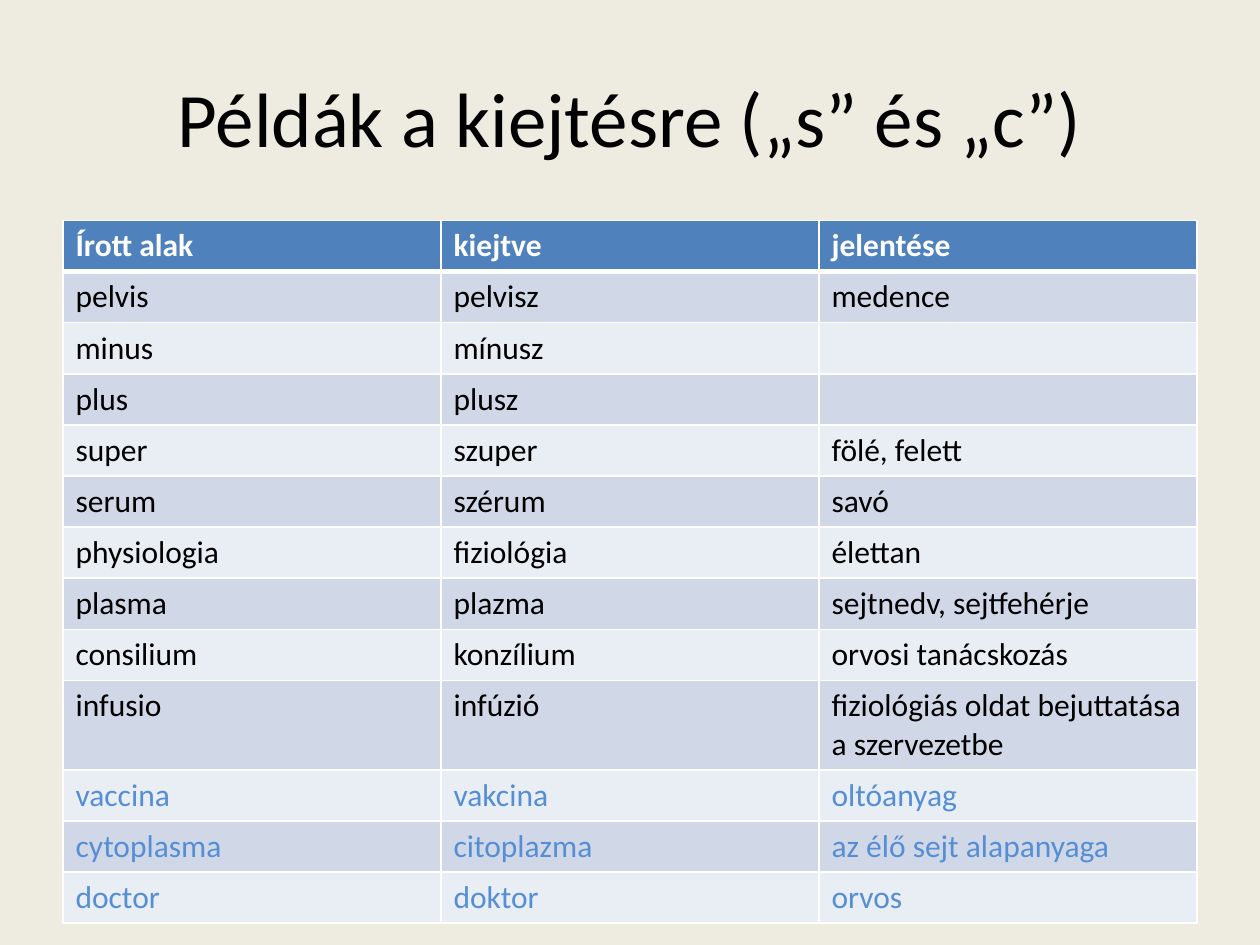
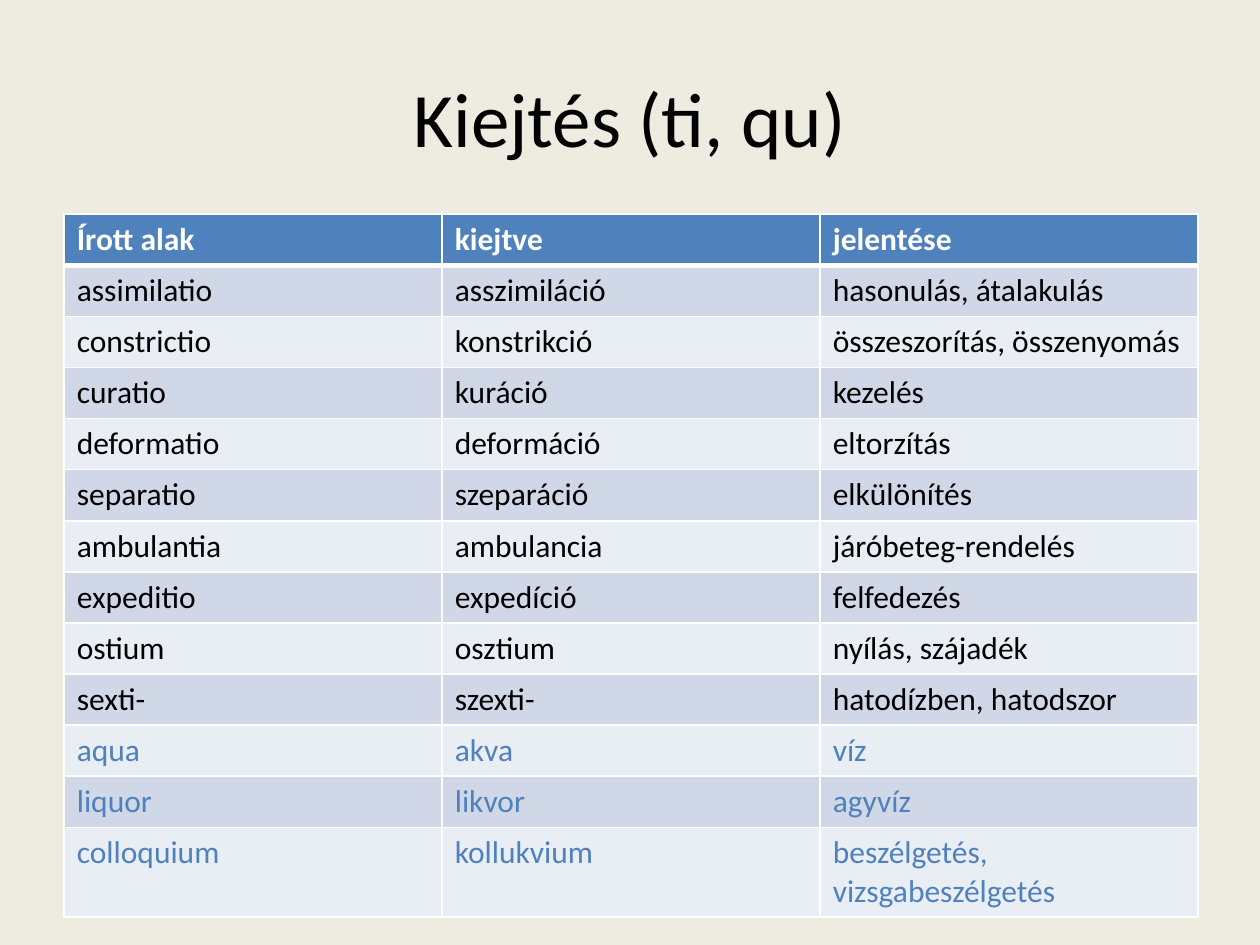
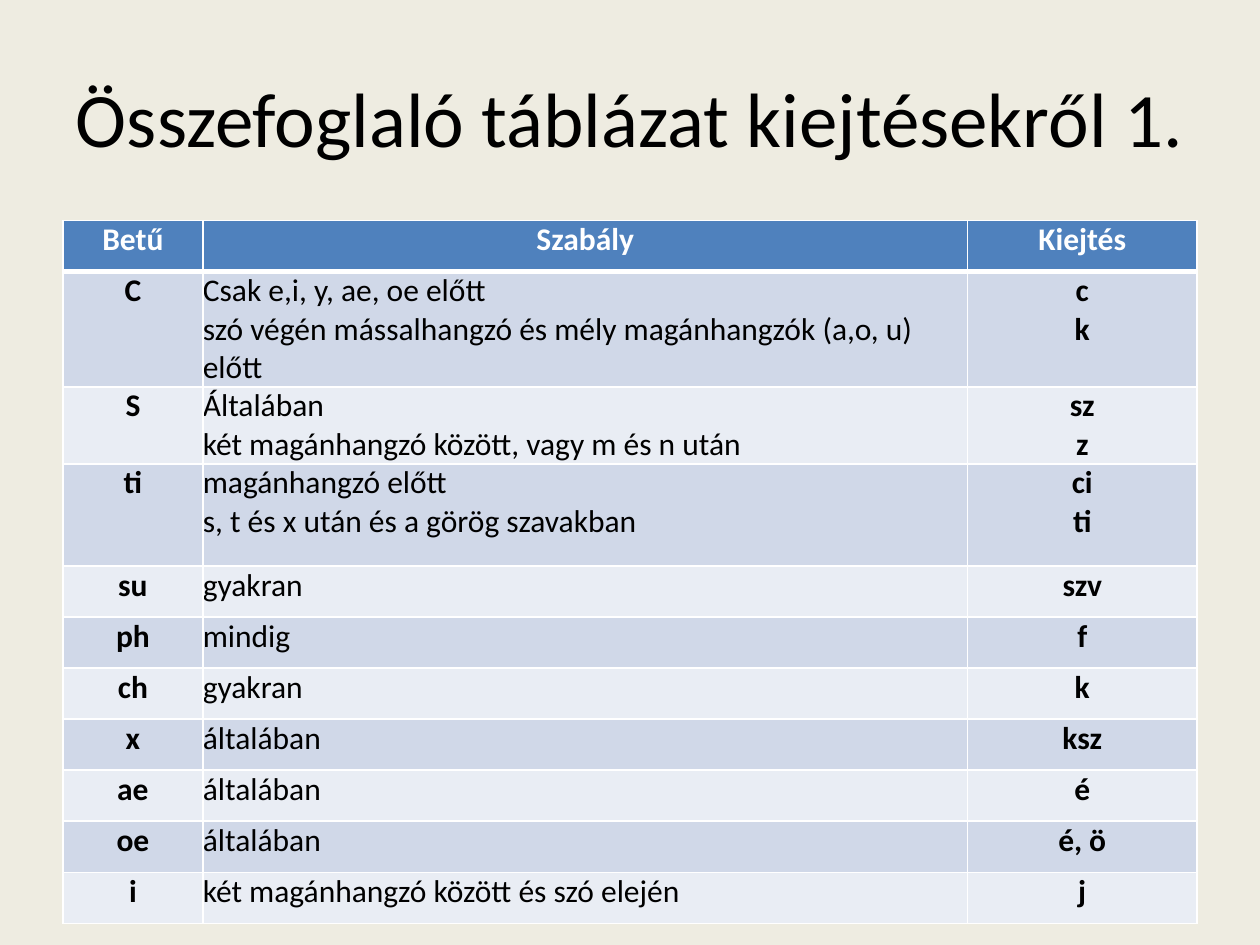
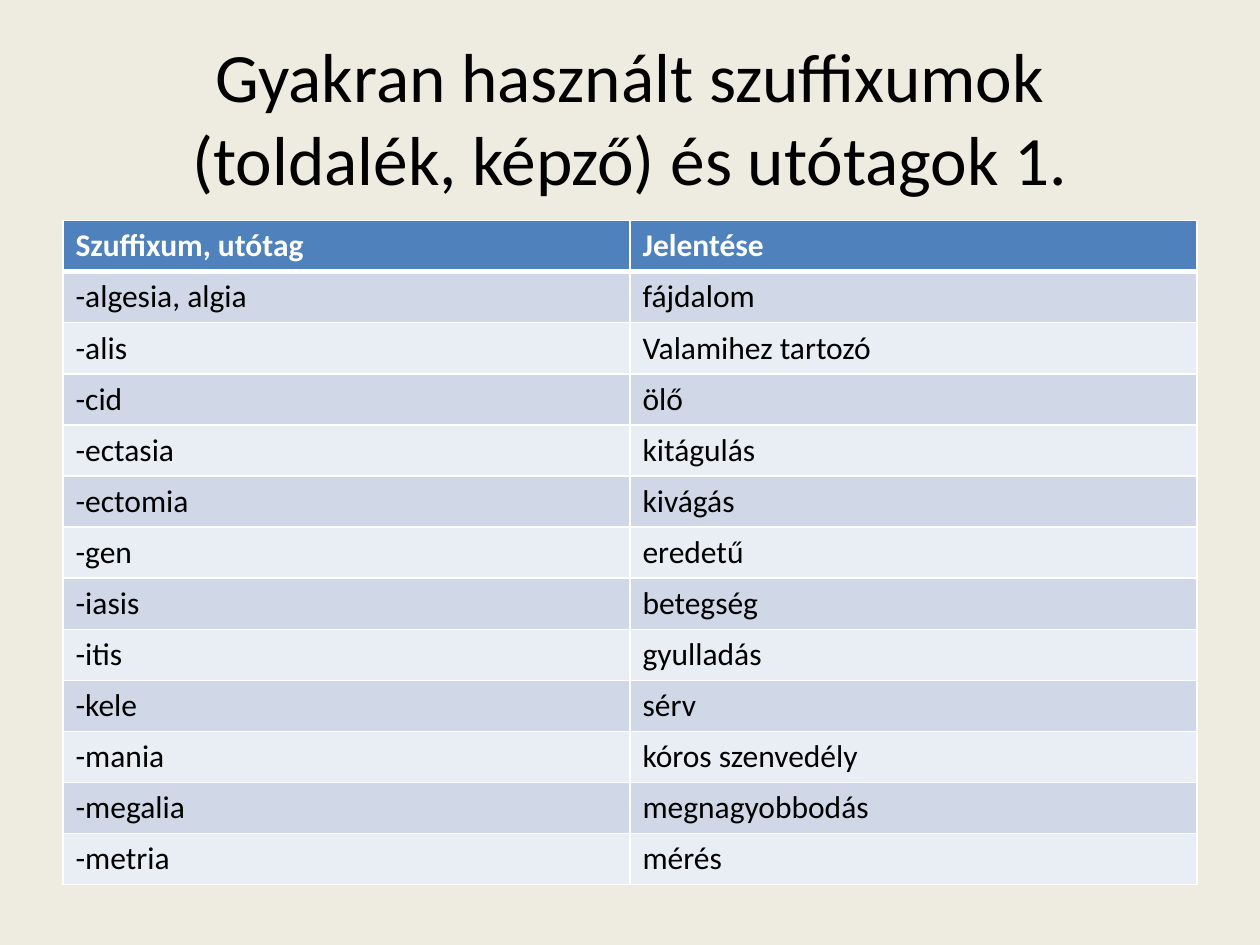
from pptx import Presentation
from pptx.dml.color import RGBColor
from pptx.enum.text import MSO_ANCHOR as Anchor, PP_ALIGN as Align
from pptx.oxml import parse_xml
from pptx.oxml.ns import nsdecls
from pptx.util import Inches, Pt

WIDE, HIGH = Inches(10), Inches(7.5)
LEFT, SPAN = WIDE * 0.05, WIDE * 0.9
ROW = Inches(5.27) / 13
FONT = "Calibri"
SAND, BLUE, SKY = "EEECE1", "4F81BD", "558ED5"
WHITE, BLACK = "FFFFFF", "000000"
BANDS = ["E9EDF4", "D0D8E8"]


def hue(code):
    return RGBColor.from_string(code)


def edge(cell, side, size):
    """Draw a white line of size points on one side (L, R, T or B) of a cell."""
    cell._tc.get_or_add_tcPr().append(parse_xml(
        f'<a:ln{side} {nsdecls("a")} w="{Pt(size)}"><a:solidFill>'
        f'<a:srgbClr val="{WHITE}"/></a:solidFill></a:ln{side}>'))


WORDS = ["Írott alak", "kiejtve", "jelentése"]

# hot: colour of the last three rows; tall: rows higher than one unit
pages = [
    dict(
        title="Példák a kiejtésre („s” és „c”)", size=44, at=(0.5, 1.75),
        cols=[3, 3, 3], hot=SKY, tall={}, tight=False,
        rows=[
            WORDS,
            ["pelvis", "pelvisz", "medence"],
            ["minus", "mínusz", ""],
            ["plus", "plusz", ""],
            ["super", "szuper", "fölé, felett"],
            ["serum", "szérum", "savó"],
            ["physiologia", "fiziológia", "élettan"],
            ["plasma", "plazma", "sejtnedv, sejtfehérje"],
            ["consilium", "konzílium", "orvosi tanácskozás"],
            ["infusio", "infúzió", "fiziológiás oldat bejuttatása a szervezetbe"],
            ["vaccina", "vakcina", "oltóanyag"],
            ["cytoplasma", "citoplazma", "az élő sejt alapanyaga"],
            ["doctor", "doktor", "orvos"],
        ]),
    dict(
        title="Kiejtés (ti, qu)", size=44, at=(0.51, 1.7),
        cols=[3, 3, 3], hot=BLUE, tall={}, tight=False,
        rows=[
            WORDS,
            ["assimilatio", "asszimiláció", "hasonulás, átalakulás"],
            ["constrictio", "konstrikció", "összeszorítás, összenyomás"],
            ["curatio", "kuráció", "kezelés"],
            ["deformatio", "deformáció", "eltorzítás"],
            ["separatio", "szeparáció", "elkülönítés"],
            ["ambulantia", "ambulancia", "járóbeteg-rendelés"],
            ["expeditio", "expedíció", "felfedezés"],
            ["ostium", "osztium", "nyílás, szájadék"],
            ["sexti-", "szexti-", "hatodízben, hatodszor"],
            ["aqua", "akva", "víz"],
            ["liquor", "likvor", "agyvíz"],
            ["colloquium", "kollukvium", "beszélgetés, vizsgabeszélgetés"],
        ]),
    dict(
        title="Összefoglaló táblázat kiejtésekről 1.", size=44, at=(0.5, 1.75),
        cols=[1.11, 6.07, 1.82], hot=BLACK, tall={3: 2}, tight=True,
        rows=[
            ["Betű", "Szabály", "Kiejtés"],
            ["C", "Csak e,i, y, ae, oe előtt\nszó végén mássalhangzó és mély "
             "magánhangzók (a,o, u) előtt", "c\nk"],
            ["S", "Általában\nkét magánhangzó között, vagy m és n után", "sz\nz"],
            ["ti", "magánhangzó előtt\ns, t és x után és a görög szavakban", "ci\nti"],
            ["su", "gyakran", "szv"],
            ["ph", "mindig", "f"],
            ["ch", "gyakran", "k"],
            ["x", "általában", "ksz"],
            ["ae", "általában", "é"],
            ["oe", "általában", "é, ö"],
            ["i", "két magánhangzó között és szó elején", "j"],
        ]),
    dict(
        title="Gyakran használt szuffixumok (toldalék, képző) és utótagok 1.",
        size=39.6, at=(0.5, 1.75),
        cols=[4.5, 4.5], hot=BLACK, tall={}, tight=False,
        rows=[
            ["Szuffixum, utótag", "Jelentése"],
            ["-algesia, algia", "fájdalom"],
            ["-alis", "Valamihez tartozó"],
            ["-cid", "ölő"],
            ["-ectasia", "kitágulás"],
            ["-ectomia", "kivágás"],
            ["-gen", "eredetű"],
            ["-iasis", "betegség"],
            ["-itis", "gyulladás"],
            ["-kele", "sérv"],
            ["-mania", "kóros szenvedély"],
            ["-megalia", "megnagyobbodás"],
            ["-metria", "mérés"],
        ]),
]

deck = Presentation()
deck.slide_width, deck.slide_height = WIDE, HIGH
back = deck.slide_master.background.fill
back.solid()
back.fore_color.rgb = hue(SAND)

for page in pages:
    slide = deck.slides.add_slide(deck.slide_layouts[5])
    title = slide.shapes.title
    title.left, title.top = int(LEFT), int(HIGH * 0.04)
    title.width, title.height = int(SPAN), Inches(1.25)
    frame = title.text_frame
    frame.text = page["title"]
    frame.vertical_anchor = Anchor.MIDDLE
    para = frame.paragraphs[0]
    para.alignment = Align.CENTER
    font = para.runs[0].font
    font.name, font.size = FONT, Pt(page["size"])
    font.color.rgb = hue(BLACK)

    rows, cols, tight = page["rows"], page["cols"], page["tight"]
    x, y = page["at"]
    units = [page["tall"].get(r, 1) for r in range(len(rows))]
    table = slide.shapes.add_table(
        len(rows), len(cols), Inches(x), Inches(y),
        int(SPAN), int(ROW * sum(units))).table
    for col, width in zip(table.columns, cols):
        col.width = Inches(width)

    for r, row in enumerate(rows):
        table.rows[r].height = int(ROW * units[r])
        head = r == 0
        ink = WHITE if head else page["hot"] if r >= len(rows) - 3 else BLACK
        for c, text in enumerate(row):
            cell = table.cell(r, c)
            cell.text = text
            for side in "LRTB" if head else "LRB":
                edge(cell, side, 3 if head and side == "B" else 1)
            cell.fill.solid()
            cell.fill.fore_color.rgb = hue(BLUE if head else BANDS[r % 2])
            if tight:
                cell.margin_left = cell.margin_right = 0
                cell.margin_top = cell.margin_bottom = 0
            mid = tight and (head or c != 1)
            for para in cell.text_frame.paragraphs:
                para.alignment = Align.CENTER if mid else Align.LEFT
                for run in para.runs:
                    font = run.font
                    font.name, font.size = FONT, Pt(18)
                    font.bold = head or mid
                    font.color.rgb = hue(ink)

deck.save("out.pptx")
